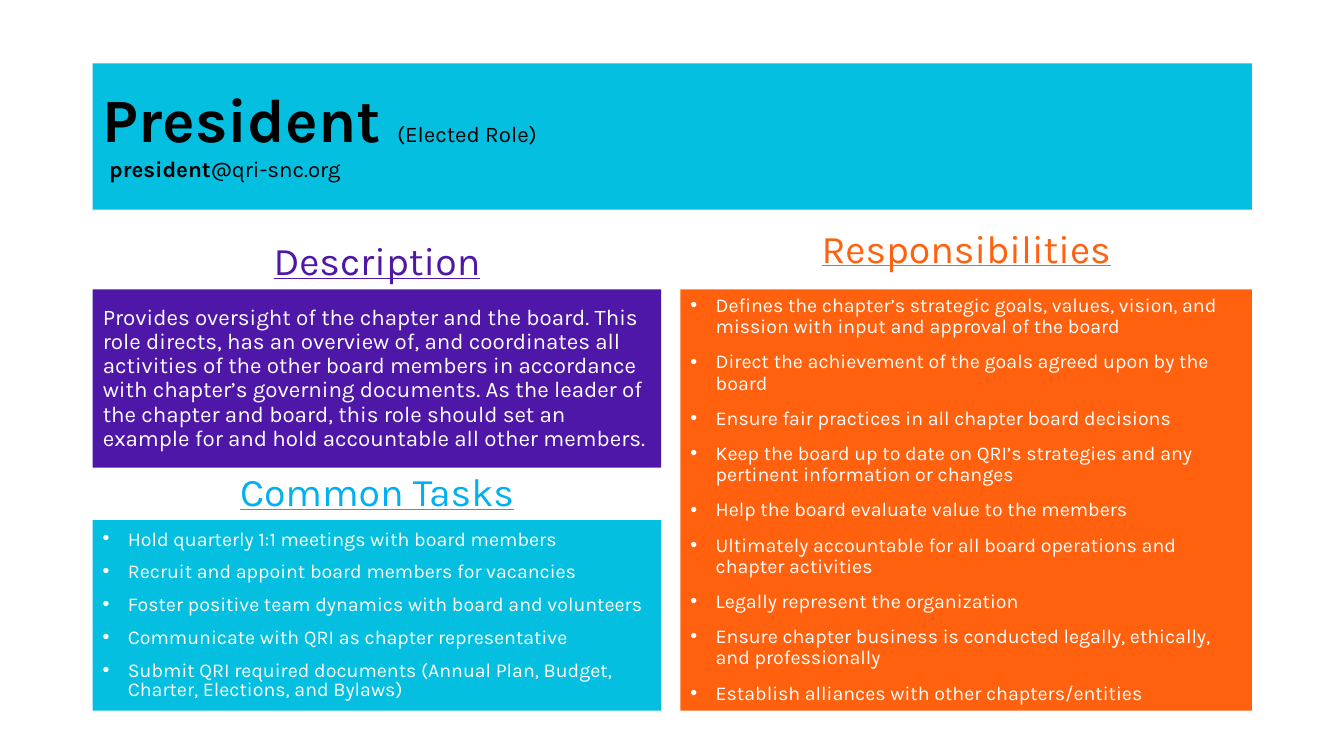
from lxml import etree
from pptx import Presentation
from pptx.dml.color import RGBColor
from pptx.enum import shapes, text
from pptx.oxml import ns
from pptx.util import Pt

COLORS = {"cyan": "04BFE0", "purple": "4E17A8", "orange": "FF610F",
          "blue": "00B0F0", "white": "FFFFFF", "black": "000000"}
FONT = "Karla"
INDENT = 18
LEFT, RIGHT = 66.24, 486
LEFT_W, RIGHT_W = 406.08, 408.24
BODY_TOP, BOTTOM = 206.64, 507.6
HEAD_H = 64.8

RESPONSIBILITIES = [
    "Defines the chapter’s strategic goals, values, vision, and mission with input and approval of the board",
    "Direct the achievement of the goals agreed upon by the board",
    "Ensure fair practices in all chapter board decisions",
    "Keep the board up to date on QRI’s strategies and any pertinent information or changes",
    "Help the board evaluate value to the members",
    "Ultimately accountable for all board operations and chapter activities",
    "Legally represent the organization",
    "Ensure chapter business is conducted legally, ethically, and professionally",
    "Establish alliances with other chapters/entities",
]
DESCRIPTION = (
    "Provides oversight of the chapter and the board. This role directs, has an overview of, "
    "and coordinates all activities of the other board members in accordance with chapter’s "
    "governing documents. As the leader of the chapter and board, this role should set an "
    "example for and hold accountable all other members."
)
TASKS = [
    "Hold quarterly 1:1 meetings with board members",
    "Recruit and appoint board members for vacancies",
    "Foster positive team dynamics with board and volunteers",
    "Communicate with QRI as chapter representative",
    "Submit QRI required documents (Annual Plan, Budget, Charter, Elections, and Bylaws)",
]


def rgb(name):
    return RGBColor.from_string(COLORS[name])


def add_run(p, words, size, color, bold=False, underline=False):
    r = p.add_run()
    r.text = words
    r.font.name = FONT
    r.font.size = Pt(size)
    r.font.bold = bold
    r.font.underline = underline
    r.font.color.rgb = rgb(color)


def set_bullet(p, bullet):
    pPr = p._p.get_or_add_pPr()
    pPr.set("marL", str(Pt(INDENT if bullet else 0)))
    pPr.set("indent", str(Pt(-INDENT if bullet else 0)))
    if bullet:
        etree.SubElement(pPr, ns.qn("a:buFont"), typeface="Arial")
        etree.SubElement(pPr, ns.qn("a:buChar"), char="•")
    else:
        etree.SubElement(pPr, ns.qn("a:buNone"))


def place(sp, box, fill=None, anchor=text.MSO_ANCHOR.MIDDLE):
    sp.left, sp.top, sp.width, sp.height = map(Pt, box)
    if fill:
        sp.fill.solid()
        sp.fill.fore_color.rgb = rgb(fill)
    tf = sp.text_frame
    tf.word_wrap = True
    tf.auto_size = text.MSO_AUTO_SIZE.NONE
    tf.vertical_anchor = anchor
    return tf


def write(tf, lines, size, color, align=text.PP_ALIGN.LEFT, spacing=0.9, bullet=False, underline=False):
    for i, line in enumerate(lines):
        p = tf.add_paragraph() if i else tf.paragraphs[0]
        p.alignment = align
        p.line_spacing = spacing
        p.space_before = Pt(10)
        set_bullet(p, bullet)
        add_run(p, line, size, color, underline=underline)


def banner(sp, box):
    p = place(sp, box, "cyan").paragraphs[0]
    p.alignment = text.PP_ALIGN.LEFT
    p.line_spacing = 0.9
    p.space_before = Pt(0)
    add_run(p, "President ", 44, "black", bold=True)
    add_run(p, "(Elected Role)", 16, "black")
    p.add_line_break()
    add_run(p, " ", 18, "black", bold=True)
    add_run(p, "president", 16, "black", bold=True)
    add_run(p, "@qri-snc.org", 16, "black")


def section(head, body, box, title, lines, size, color, fill, lift=0, **fmt):
    x, y, w, h = box
    tf = place(head, (x, y - HEAD_H - lift, w, HEAD_H), anchor=text.MSO_ANCHOR.BOTTOM)
    write(tf, [title], 28, color, align=text.PP_ALIGN.CENTER, underline=True)
    write(place(body, box, fill), lines, size, "white", **fmt)


def main():
    prs = Presentation()
    prs.slide_width, prs.slide_height = Pt(960), Pt(540)
    s = prs.slides.add_slide(prs.slide_layouts[4])
    ph = {sp.placeholder_format.idx: sp for sp in s.placeholders}

    banner(ph[0], (LEFT, 45.36, RIGHT + RIGHT_W - LEFT, 104.4))
    section(ph[3], ph[4], (RIGHT, BODY_TOP, RIGHT_W, BOTTOM - BODY_TOP), "Responsibilities",
            RESPONSIBILITIES, 14, "orange", "orange", lift=9, bullet=True)
    section(ph[1], ph[2], (LEFT, BODY_TOP, LEFT_W, 127.44), "Description",
            [DESCRIPTION], 16, "purple", "purple")

    tasks_top = 371.52
    body = s.shapes.add_shape(shapes.MSO_SHAPE.RECTANGLE, 0, 0, 0, 0)
    body.shadow.inherit = False
    body.line.fill.background()
    head = s.shapes.add_textbox(0, 0, 0, 0)
    section(head, body, (LEFT, tasks_top, LEFT_W, BOTTOM - tasks_top), "Common Tasks",
            TASKS, 14, "blue", "cyan", spacing=0.8, bullet=True)

    prs.save("out.pptx")


if __name__ == "__main__":
    main()
